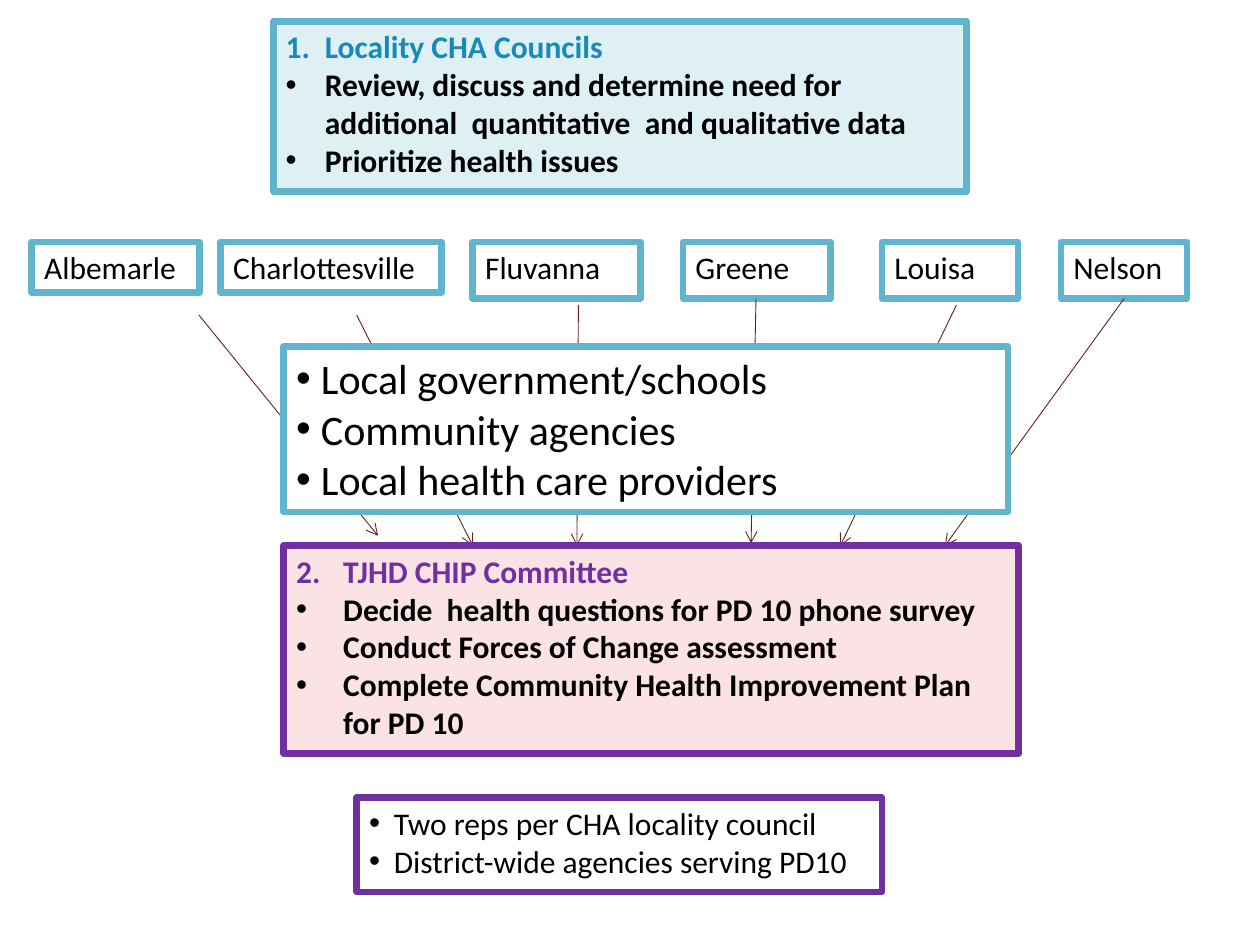
from lxml import etree
from pptx import Presentation
from pptx import util as u
from pptx.dml.color import RGBColor
from pptx.enum import shapes, text
from pptx.oxml.ns import qn

BLUE, PURPLE, WINE = "60B5CC", "7030A0", "672020"
BLACK, WHITE = "000000", "FFFFFF"


def color(code):
    return RGBColor.from_string(code)


class Chart:
    """Holds the style and the slide being drawn; lengths are in cm."""
    font = "Calibri"
    edge = 3.78
    thin = 0.5

    def __init__(self, slide):
        self.slide = slide

    def box(self, left, top, width, height, line, fill=WHITE):
        shape = self.slide.shapes.add_shape(
            shapes.MSO_SHAPE.RECTANGLE,
            u.Cm(left), u.Cm(top), u.Cm(width), u.Cm(height))
        shape.shadow.inherit = False
        if fill:
            shape.fill.solid()
            shape.fill.fore_color.rgb = color(fill)
        else:
            shape.fill.background()
        shape.line.color.rgb = color(line)
        shape.line.width = u.Pt(self.edge)
        frame = shape.text_frame
        frame.word_wrap = True
        frame.auto_size = text.MSO_AUTO_SIZE.SHAPE_TO_FIT_TEXT
        frame.vertical_anchor = text.MSO_ANCHOR.TOP
        return frame

    def para(self, frame, words, size=18, ink=BLACK, bold=False):
        para = frame.paragraphs[0]
        if para.runs:
            para = frame.add_paragraph()
        para.alignment = text.PP_ALIGN.LEFT
        run = para.add_run()
        run.text = words
        run.font.name = self.font
        run.font.size = u.Pt(size)
        run.font.bold = bold
        run.font.color.rgb = color(ink)
        return para

    def mark(self, para, indent, start=None):
        """Hang a bullet, or a number if start is given."""
        props = para._p.get_or_add_pPr()
        props.set("marL", str(u.Cm(indent)))
        props.set("indent", str(-u.Cm(indent)))
        face = etree.SubElement(props, qn("a:buFont"))
        if start:
            face.set("typeface", self.font)
            etree.SubElement(props, qn("a:buAutoNum"),
                             type="arabicPeriod", startAt=str(start))
        else:
            face.set("typeface", "Arial")
            etree.SubElement(props, qn("a:buChar"), char="•")

    def bullets(self, frame, items, indent, size=18, bold=False):
        for item in items:
            self.mark(self.para(frame, item, size, bold=bold), indent)

    def step(self, frame, number, title, ink, items, indent):
        """Write a numbered heading with bold bullets below it."""
        head = self.para(frame, title, ink=ink, bold=True)
        self.mark(head, indent, number)
        self.bullets(frame, items, indent, bold=True)

    def arrow(self, x1, y1, x2, y2):
        line = self.slide.shapes.add_connector(
            shapes.MSO_CONNECTOR.STRAIGHT,
            u.Cm(x1), u.Cm(y1), u.Cm(x2), u.Cm(y2))
        line.line.color.rgb = color(WINE)
        line.line.width = u.Pt(self.thin)
        etree.SubElement(line.line._get_or_add_ln(), qn("a:tailEnd"),
                         type="arrow")
        etree.SubElement(line._element.spPr, qn("a:effectLst"))


def main():
    deck = Presentation()
    deck.slide_width, deck.slide_height = u.Cm(25.4), u.Cm(19.05)
    chart = Chart(deck.slides.add_slide(deck.slide_layouts[6]))

    council = chart.box(5.51, 0.43, 13.97, 3.43, BLUE, "DFF0F5")
    chart.step(council, 1, "Locality CHA Councils", "168BBA", [
        "Review, discuss and determine need for "
        "additional  quantitative  and qualitative data",
        "Prioritize health issues"], 0.79)

    for name, left, width, height, fill in [
            ("Albemarle", 0.64, 3.38, 1.02, WHITE),
            ("Charlottesville", 4.45, 4.45, 1.02, WHITE),
            ("Fluvanna", 9.53, 3.38, 1.14, WHITE),
            ("Greene", 13.77, 2.97, 1.14, WHITE),
            ("Louisa", 17.78, 2.74, 1.14, None),
            ("Nelson", 21.39, 2.54, 1.14, None)]:
        chart.para(chart.box(left, 4.88, width, height, BLUE, fill), name)

    for ends in [(4.01, 6.35, 7.62, 10.8), (7.19, 6.35, 9.53, 11),
                 (11.66, 6.15, 11.63, 11), (15.24, 6.02, 15.14, 10.95),
                 (19.28, 6.15, 16.94, 11), (22.66, 6.02, 19.05, 11)]:
        chart.arrow(*ends)

    panel = chart.box(5.72, 11, 14.81, 4.19, PURPLE, "FAE2E5")
    chart.step(panel, 2, "TJHD CHIP Committee", PURPLE, [
        "Decide  health questions for PD 10 phone survey",
        "Conduct Forces of Change assessment",
        "Complete Community Health Improvement Plan for PD 10"], 0.95)

    reps = chart.box(7.19, 16.08, 10.59, 1.9, PURPLE)
    chart.bullets(reps, ["Two reps per CHA locality council",
                         "District-wide agencies serving PD10"], 0.5)

    local = chart.box(5.72, 6.99, 14.6, 3.33, BLUE)
    chart.bullets(local, ["Local government/schools", "Community agencies",
                          "Local health care providers"], 0.5, size=24)

    deck.save("out.pptx")


if __name__ == "__main__":
    main()
